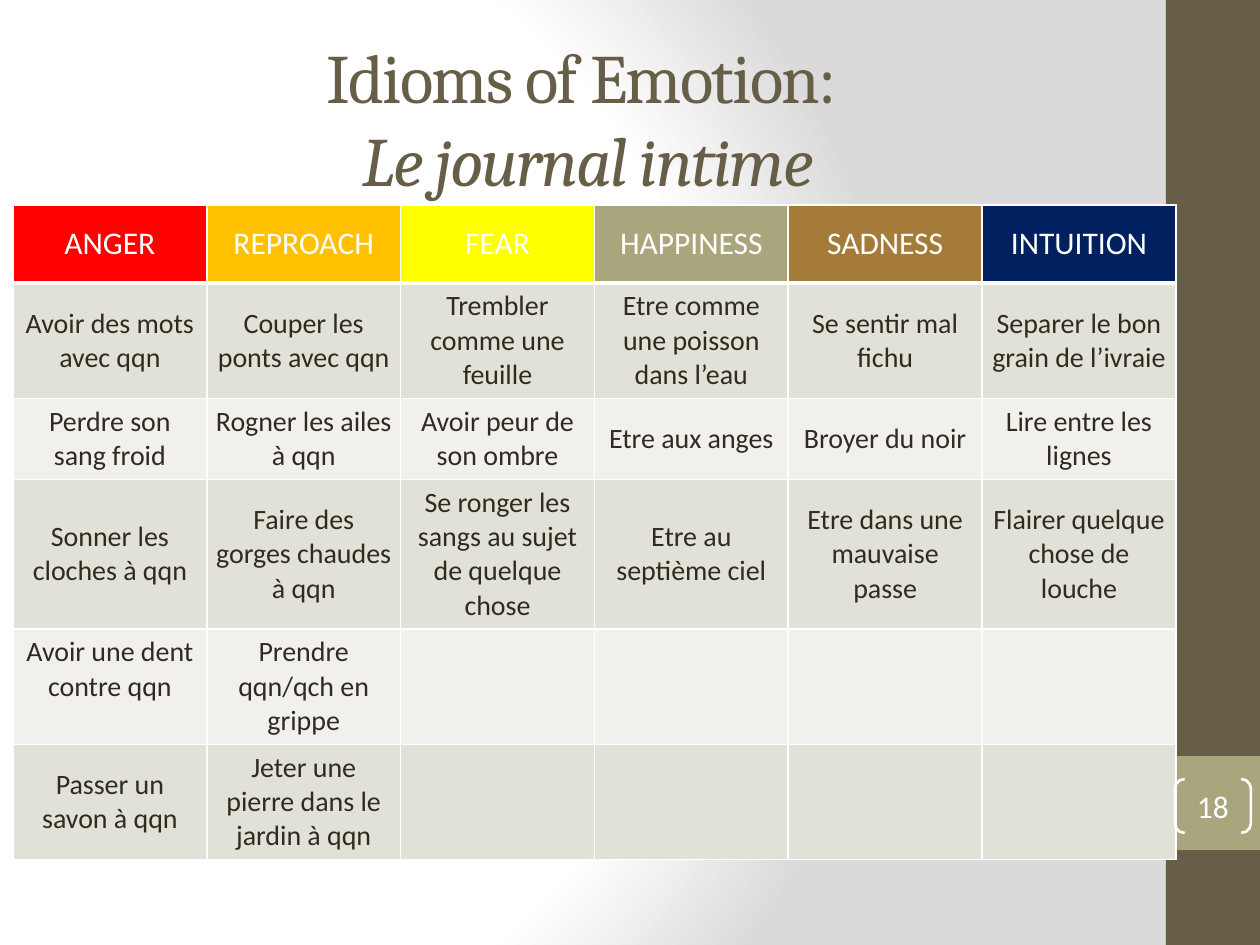
from pptx import Presentation, oxml, util as u
from pptx.dml import color
from pptx.enum import shapes, text

PX = 914400 // 126
NS = 'xmlns:a="http://schemas.openxmlformats.org/drawingml/2006/main"'
PNS = 'xmlns:p="http://schemas.openxmlformats.org/presentationml/2006/main"'
WHITE, BROWN, SAGE, INK = "FFFFFF", "675E47", "A9A57C", "2F2B20"
BANDS = ["E2E1D7", "F1F0EC"]
HEADS = [("ANGER", "FF0000"), ("REPROACH", "FFC000"), ("FEAR", "FFFF00"),
         ("HAPPINESS", SAGE), ("SADNESS", "A47B38"), ("INTUITION", "002060")]
IDIOMS = [
    ["Avoir des mots avec qqn", "Couper les ponts avec qqn",
     "Trembler comme une feuille", "Etre comme une poisson dans l’eau",
     "Se sentir mal fichu", "Separer le bon grain de l’ivraie"],
    ["Perdre son sang froid", "Rogner les ailes à qqn",
     "Avoir peur de son ombre", "Etre aux anges",
     "Broyer du noir", "Lire entre les lignes"],
    ["Sonner les cloches à qqn", "Faire des gorges chaudes à qqn",
     "Se ronger les sangs au sujet de quelque chose", "Etre au septième ciel",
     "Etre dans une mauvaise passe", "Flairer quelque chose de louche"],
    ["Avoir une dent contre qqn", "Prendre qqn/qch en grippe", "", "", "", ""],
    ["Passer un savon à qqn", "Jeter une pierre dans le jardin à qqn", "", "", "", ""],
]
ROWS = [78, 103, 78, 110, 110, 110]


def px(*vals):
    return [v * PX for v in vals]


def rgb(code):
    return color.RGBColor.from_string(code)


def paint(part, code):
    part.fill.solid()
    part.fill.fore_color.rgb = rgb(code)


def write(para, words, size, code, font="Calibri"):
    para.alignment = text.PP_ALIGN.CENTER
    run = para.add_run()
    run.text = words
    run.font.size = u.Pt(size)
    run.font.name = font
    run.font.color.rgb = rgb(code)
    return run


def shade(slide):
    stops = "".join(f'<a:gs pos="{pos}000"><a:srgbClr val="{code}"/></a:gs>'
                    for pos, code in [(0, WHITE), (75, WHITE), (100, "DADADA")])
    back = oxml.parse_xml(
        f'<p:bg {PNS} {NS}><p:bgPr><a:gradFill rotWithShape="1"><a:gsLst>{stops}</a:gsLst>'
        '<a:path path="circle"><a:fillToRect l="20000" t="50000" r="100000" b="50000"/>'
        '</a:path></a:gradFill><a:effectLst/></p:bgPr></p:bg>')
    slide.element.cSld.insert(0, back)


def block(slide, box, code):
    rect = slide.shapes.add_shape(shapes.MSO_SHAPE.RECTANGLE, *px(*box))
    rect.shadow.inherit = False
    paint(rect, code)
    rect.line.fill.background()


def side(slide, box):
    x, y, w, h = box
    block(slide, box, BROWN)
    block(slide, (x, y + h * 4 // 5, w, w), SAGE)


def title(slide, box):
    head = slide.shapes.title
    head.left, head.top, head.width, head.height = px(*box)
    frame = head.text_frame
    frame.word_wrap = True
    frame.auto_size = text.MSO_AUTO_SIZE.NONE
    frame.vertical_anchor = text.MSO_ANCHOR.MIDDLE
    para = frame.paragraphs[0]
    first = write(para, "Idioms of Emotion: ", 39.6, BROWN, "Cambria")
    para.add_line_break()
    last = write(para, "Le journal intime", 39.6, BROWN, "Cambria")
    last.font.italic = True
    for run in (first, last):
        run.font._element.set("spc", "-100")


def edge(cell, base):
    props = cell._tc.get_or_add_tcPr()
    for spot, (name, wide) in enumerate([("L", 1), ("R", 1), ("T", 1), ("B", base)]):
        props.insert(spot, oxml.parse_xml(
            f'<a:ln{name} {NS} w="{u.Pt(wide)}"><a:solidFill><a:srgbClr val="{WHITE}"/>'
            f'</a:solidFill></a:ln{name}>'))


def fill(cell, words, size, ink, code, base=1):
    cell.vertical_anchor = text.MSO_ANCHOR.MIDDLE
    cell.margin_left = cell.margin_right = u.Inches(0.07)
    cell.margin_top = cell.margin_bottom = u.Inches(0.05)
    paint(cell, code)
    edge(cell, base)
    if words:
        write(cell.text_frame.paragraphs[0], words, size, ink)


def grid(slide, box):
    table = slide.shapes.add_table(len(ROWS), len(HEADS), *px(*box)).table
    table.first_row = table.horz_banding = False
    for row, high in zip(table.rows, ROWS):
        row.height = high * PX
    for col, (name, code) in enumerate(HEADS):
        table.columns[col].width = box[2] * PX // len(HEADS)
        fill(table.cell(0, col), name, 18, WHITE, code, 3)
    for row, line in enumerate(IDIOMS):
        for col, words in enumerate(line):
            fill(table.cell(row + 1, col), words, 16, INK, BANDS[row % 2])
    table.cell(4, 0).vertical_anchor = text.MSO_ANCHOR.TOP


def badge(slide, box):
    pair = slide.shapes.add_shape(shapes.MSO_SHAPE.DOUBLE_BRACKET, *px(*box))
    pair.shadow.inherit = False
    pair.adjustments[0] = 0.18
    pair.fill.background()
    pair.line.color.rgb = rgb(WHITE)
    pair.line.width = u.Pt(1.5)
    frame = pair.text_frame
    frame.margin_left = frame.margin_right = frame.margin_top = frame.margin_bottom = 0
    frame.vertical_anchor = text.MSO_ANCHOR.MIDDLE
    write(frame.paragraphs[0], "18", 18, WHITE)


def main():
    deck = Presentation()
    deck.slide_width, deck.slide_height = px(1260, 945)
    slide = deck.slides.add_slide(deck.slide_layouts[5])
    shade(slide)
    side(slide, (1166, 0, 94, 945))
    title(slide, (63, 38, 1050, 158))
    grid(slide, (13, 205, 1163, 645))
    badge(slide, (1175, 779, 76, 54))
    deck.save("out.pptx")


if __name__ == "__main__":
    main()
